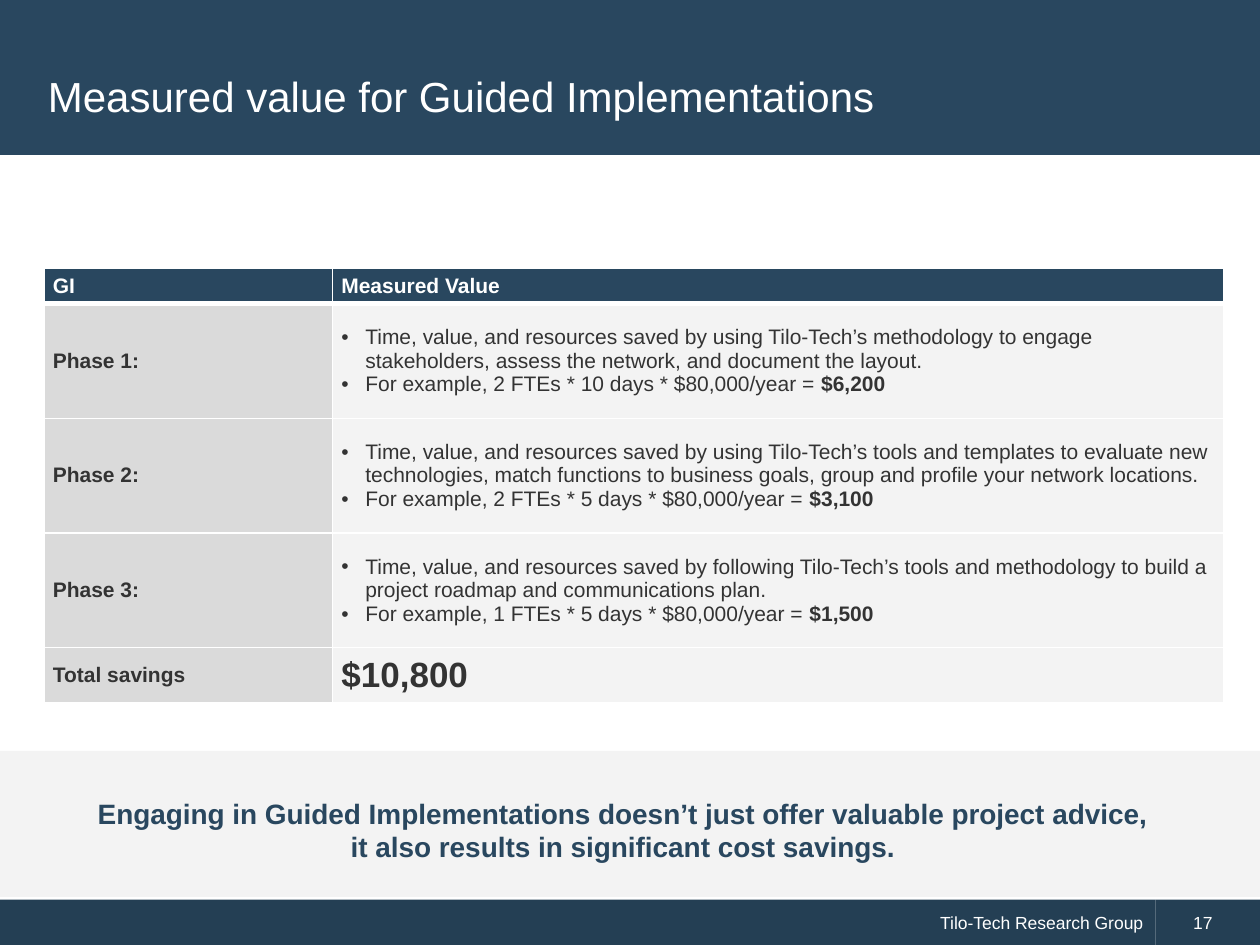
from dataclasses import dataclass

import pptx
import pptx.dml.color
import pptx.enum.shapes
import pptx.enum.text
import pptx.oxml
import pptx.oxml.ns
import pptx.util
from pptx.util import Inches

ALIGN = pptx.enum.text.PP_ALIGN
MIDDLE = pptx.enum.text.MSO_ANCHOR.MIDDLE
NAVY, DARK_NAVY, WHITE = "29475F", "243F54", "FFFFFF"
INK, LABEL_GREY, PALE_GREY = "333333", "D6D6D6", "F2F2F2"
COMPANY = "Tilo-Tech"


@dataclass(frozen=True)
class Phase:
    name: str
    benefit: str
    example: str
    saving: str


@dataclass(frozen=True)
class Band:
    left: float
    top: float
    width: float
    height: float
    color: str
    opacity: int = 100


PHASES = [
    Phase("Phase 1:",
          f"Time, value, and resources saved by using {COMPANY}’s methodology to engage "
          "stakeholders, assess the network, and document the layout.",
          "For example, 2 FTEs * 10 days * $80,000/year = ", "$6,200"),
    Phase("Phase 2:",
          f"Time, value, and resources saved by using {COMPANY}’s tools and templates to evaluate "
          "new technologies, match functions to business goals, group and profile your network "
          "locations.",
          "For example, 2 FTEs * 5 days * $80,000/year = ", "$3,100"),
    Phase("Phase 3:",
          f"Time, value, and resources saved by following {COMPANY}’s tools and methodology to "
          "build a project roadmap and communications plan.",
          "For example, 1 FTEs * 5 days * $80,000/year = ", "$1,500"),
]
HEADER_BAND = Band(0, 0, 10, 1.23, NAVY)
MESSAGE_BAND = Band(0, 5.96, 10, 1.16, PALE_GREY, 90)
FOOTER_BAND = Band(0, 7.14, 9.17, 0.37, DARK_NAVY)
PAGE_BAND = Band(9.17, 7.14, 0.83, 0.37, DARK_NAVY)


def rgb(color: str) -> pptx.dml.color.RGBColor:
    return pptx.dml.color.RGBColor.from_string(color)


def parse_drawing(tag: str, attributes: str, content: str = ""):
    """Make one DrawingML element."""
    namespace = pptx.oxml.ns.nsdecls("a")
    return pptx.oxml.parse_xml(f"<a:{tag} {namespace} {attributes}>{content}</a:{tag}>")


def paint(fill, holder, color: str, opacity: int = 100) -> None:
    """Set a solid fill; holder is the XML element that carries it."""
    fill.solid()
    fill.fore_color.rgb = rgb(color)
    if opacity < 100:
        tone = holder.find(pptx.oxml.ns.qn("a:solidFill"))[0]
        tone.append(parse_drawing("alpha", f'val="{opacity * 1000}"'))


def add_run(paragraph, text: str, size: float, color: str, bold: bool = False) -> None:
    run = paragraph.add_run()
    run.text = text
    run.font.name = "Arial"
    run.font.size = pptx.util.Pt(size)
    run.font.bold = bold
    run.font.color.rgb = rgb(color)


def add_band(slide, band: Band):
    shape = slide.shapes.add_shape(
        pptx.enum.shapes.MSO_SHAPE.RECTANGLE, Inches(band.left), Inches(band.top),
        Inches(band.width), Inches(band.height))
    shape.shadow.inherit = False
    shape.line.fill.background()
    paint(shape.fill, shape.element.spPr, band.color, band.opacity)
    return shape


def add_footer(slide, band: Band, text: str, align, indent: float) -> None:
    frame = add_band(slide, band).text_frame
    frame.vertical_anchor = MIDDLE
    frame.margin_left = Inches(0.1 + indent)
    frame.paragraphs[0].alignment = align
    add_run(frame.paragraphs[0], text, 10, WHITE)


def add_title(slide, text: str) -> None:
    title = slide.shapes.title
    title.left, title.top = Inches(0.28), Inches(0.28)
    title.width, title.height = Inches(9.43), Inches(0.96)
    title.text_frame.vertical_anchor = MIDDLE
    title.text_frame.paragraphs[0].alignment = ALIGN.LEFT
    add_run(title.text_frame.paragraphs[0], text, 24, WHITE)
    title.element.addprevious(add_band(slide, HEADER_BAND).element)


def format_cell(cell, color: str, opacity: int, top: float = 1, bottom: float = 1) -> None:
    """Set margins, fill and white borders; top and bottom are border widths in points."""
    cell.vertical_anchor = MIDDLE
    cell.margin_left = cell.margin_right = Inches(0.07)
    cell.margin_top = cell.margin_bottom = 0
    properties = cell._tc.get_or_add_tcPr()
    paint(cell.fill, properties, color, opacity)
    widths = {"lnL": 1, "lnR": 1, "lnT": top, "lnB": bottom}
    for position, (side, width) in enumerate(widths.items()):
        properties.insert(position, parse_drawing(
            side, f'w="{pptx.util.Pt(width)}"',
            f'<a:solidFill><a:srgbClr val="{WHITE}"/></a:solidFill>'))


def add_bullet(paragraph) -> None:
    properties = paragraph._p.get_or_add_pPr()
    properties.set("marL", str(Inches(0.19)))
    properties.set("indent", str(-Inches(0.19)))
    properties.append(parse_drawing("buFont", 'typeface="Arial"'))
    properties.append(parse_drawing("buChar", 'char="•"'))


def write_phase(cell, phase: Phase) -> None:
    benefit = cell.text_frame.paragraphs[0]
    example = cell.text_frame.add_paragraph()
    for paragraph in (benefit, example):
        add_bullet(paragraph)
    add_run(benefit, phase.benefit, 12, INK)
    add_run(example, phase.example, 12, INK)
    add_run(example, phase.saving, 12, INK, bold=True)


def add_value_table(slide) -> None:
    heights = [0.28] + [0.91] * len(PHASES) + [0.44]
    table = slide.shapes.add_table(
        len(heights), 2, Inches(0.35), Inches(2.13), Inches(9.36), Inches(sum(heights))).table
    for column, width in zip(table.columns, (2.29, 7.07)):
        column.width = Inches(width)
    for row, height in zip(table.rows, heights):
        row.height = Inches(height)

    for column, heading in enumerate(("GI", "Measured Value")):
        cell = table.cell(0, column)
        format_cell(cell, NAVY, 100, bottom=3)
        add_run(cell.text_frame.paragraphs[0], heading, 12, WHITE, bold=True)

    labels = [phase.name for phase in PHASES] + ["Total savings"]
    for row, label in enumerate(labels, start=1):
        top = 3 if row == 1 else 1
        format_cell(table.cell(row, 0), LABEL_GREY, 90, top)
        format_cell(table.cell(row, 1), PALE_GREY, 90, top)
        add_run(table.cell(row, 0).text_frame.paragraphs[0], label, 12, INK, bold=True)
    for row, phase in enumerate(PHASES, start=1):
        write_phase(table.cell(row, 1), phase)
    total = table.cell(len(labels), 1).text_frame.paragraphs[0]
    add_run(total, "$10,800", 20, INK, bold=True)


def add_message(slide, lines: list[str]) -> None:
    add_band(slide, MESSAGE_BAND)
    frame = slide.shapes.add_textbox(
        Inches(0.62), Inches(6.27), Inches(8.71), Inches(0.64)).text_frame
    frame.word_wrap = False
    frame.auto_size = pptx.enum.text.MSO_AUTO_SIZE.SHAPE_TO_FIT_TEXT
    for number, line in enumerate(lines):
        paragraph = frame.add_paragraph() if number else frame.paragraphs[0]
        paragraph.alignment = ALIGN.CENTER
        add_run(paragraph, line, 16, NAVY, bold=True)


def main() -> None:
    presentation = pptx.Presentation()
    presentation.slide_width, presentation.slide_height = Inches(10), Inches(7.5)
    slide = presentation.slides.add_slide(presentation.slide_layouts[5])
    add_title(slide, "Measured value for Guided Implementations")
    add_footer(slide, FOOTER_BAND, f"{COMPANY} Research Group", ALIGN.RIGHT, 0.29)
    add_footer(slide, PAGE_BAND, "17", ALIGN.LEFT, 0.2)
    add_value_table(slide)
    add_message(slide, [
        "Engaging in Guided Implementations doesn’t just offer valuable project advice, ",
        "it also results in significant cost savings. ",
    ])
    presentation.save("out.pptx")


if __name__ == "__main__":
    main()
